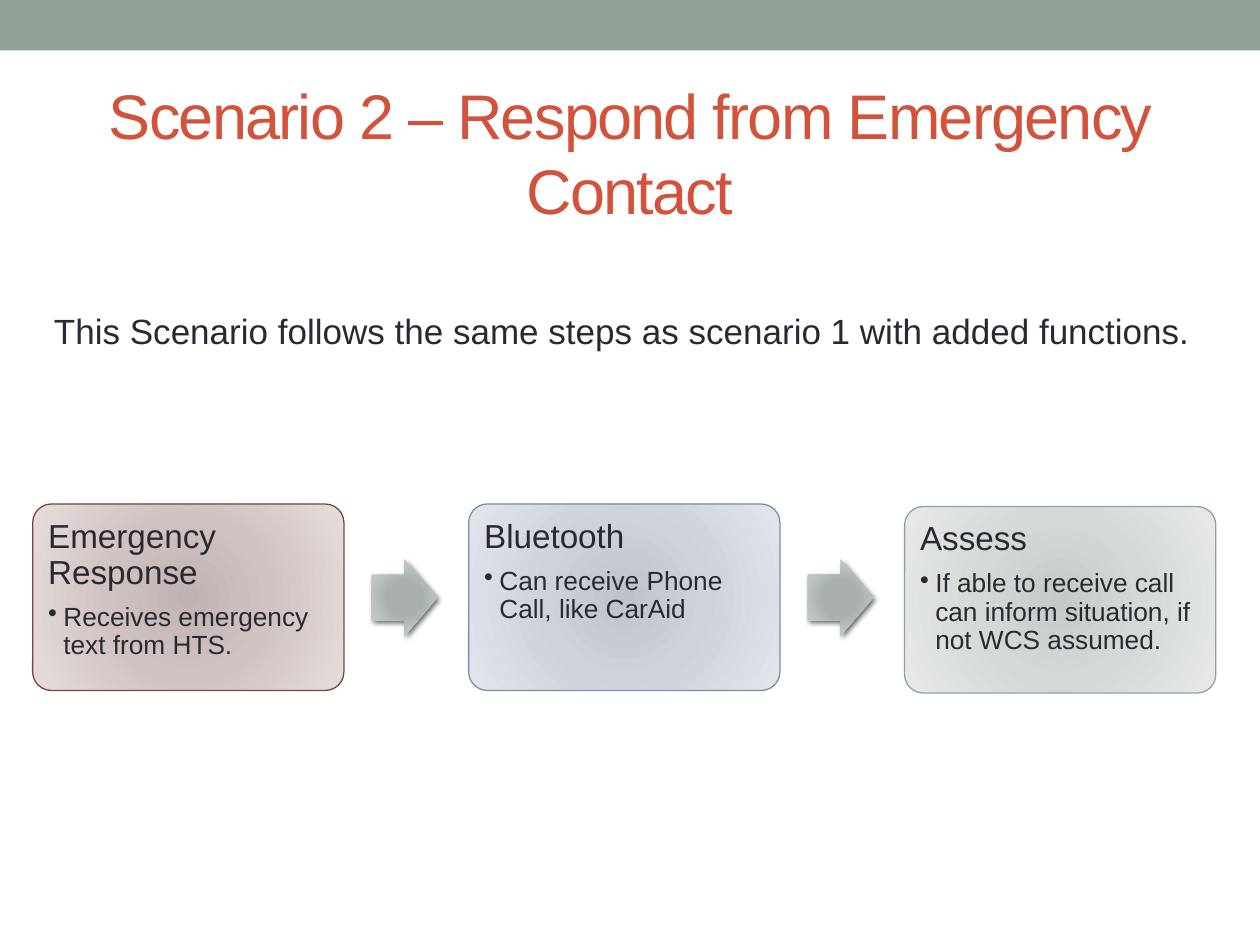
from lxml import etree
from pptx import Presentation, util as u
from pptx.dml.color import RGBColor
from pptx.enum import shapes, text
from pptx.oxml import parse_xml
from pptx.oxml.ns import nsdecls, qn

FONT = "Arial"
SAGE = RGBColor(0x93, 0xA2, 0x99)
RED = RGBColor(0xD2, 0x53, 0x3C)
INK = RGBColor(0x29, 0x29, 0x34)
BROWN = RGBColor(0x79, 0x46, 0x3D)
SLATE = RGBColor(0x80, 0x8D, 0xA0)

# Step row: left edge, column pitch, card size, arrow offset from its card
ROW_LEFT, PITCH = 0.26, 3.46
CARD_W, CARD_H = 2.47, 1.48
ARROW_DX, ARROW_W, ARROW_H = 2.69, 0.52, 0.61

# Gradient stops as {position in percent: colour}
ARROW_STOPS = {0: "AAB2AD", 34: "AAB1AD", 70: "BDC6C1", 100: "C8CECA"}
# Heading, detail, outline, gradient stops, top of card
STEPS = [
    ("Emergency Response", "Receives emergency text from HTS.", BROWN,
     {0: "C0B3B1", 45: "D0C2C0", 100: "E5DEDD"}, 4.0),
    ("Bluetooth", "Can receive Phone Call, like CarAid", SLATE,
     {0: "BEC3CB", 45: "CDD2DB", 100: "E3E6EB"}, 4.0),
    ("Assess", "If able to receive call can inform situation, if not WCS assumed.", SAGE,
     {0: "C4CAC6", 45: "D3DAD6", 100: "E7EAE8"}, 4.02),
]


def place(shape, left, top, width, height):
    shape.left, shape.top = u.Inches(left), u.Inches(top)
    shape.width, shape.height = u.Inches(width), u.Inches(height)


def add_run(paragraph, words, size, color):
    run = paragraph.add_run()
    run.text = words
    run.font.name, run.font.size = FONT, u.Pt(size)
    run.font.color.rgb = color
    return run


def add_preset(slide, kind, left, top, width, height):
    shape = slide.shapes.add_shape(
        kind, *(u.Inches(v) for v in (left, top, width, height)))
    shape.shadow.inherit = False
    shape.line.fill.background()
    return shape


def fill_radial(shape, stops):
    shape.fill.background()
    stop_xml = "".join(
        f'<a:gs pos="{pos * 1000}"><a:srgbClr val="{color}"/></a:gs>'
        for pos, color in stops.items())
    gradient = parse_xml(
        f'<a:gradFill {nsdecls("a")} rotWithShape="1"><a:gsLst>{stop_xml}</a:gsLst>'
        '<a:path path="circle"><a:fillToRect l="100000" t="100000" r="100000" b="100000"/>'
        '</a:path></a:gradFill>')
    properties = shape.fill._xPr
    properties.replace(properties.find(qn("a:noFill")), gradient)


def add_shadow(shape):
    effects = shape._element.spPr.find(qn("a:effectLst"))
    effects.append(parse_xml(
        f'<a:outerShdw {nsdecls("a")} blurRad="38100" dist="25400" dir="2700000" '
        'rotWithShape="0"><a:srgbClr val="000000"><a:alpha val="60000"/></a:srgbClr>'
        '</a:outerShdw>'))


def add_card(slide, left, top, heading, detail, outline, stops):
    card = add_preset(slide, shapes.MSO_SHAPE.ROUNDED_RECTANGLE, left, top, CARD_W, CARD_H)
    card.adjustments[0] = 0.1
    fill_radial(card, stops)
    card.line.color.rgb, card.line.width = outline, u.Pt(0.75)

    frame = card.text_frame
    frame.word_wrap = True
    frame.vertical_anchor = text.MSO_ANCHOR.TOP
    frame.margin_left = frame.margin_right = u.Inches(0.08)
    frame.margin_top = frame.margin_bottom = u.Inches(0.08)
    title_line, bullet = frame.paragraphs[0], frame.add_paragraph()
    for paragraph, words, size, after in ((title_line, heading, 19, 7),
                                          (bullet, detail, 15, 2)):
        paragraph.alignment = text.PP_ALIGN.LEFT
        paragraph.line_spacing, paragraph.space_after = 0.9, u.Pt(after)
        add_run(paragraph, words, size, INK)

    # Hanging bullet
    bullet.level = 1
    properties = bullet._p.get_or_add_pPr()
    properties.set("marL", str(u.Inches(0.12)))
    properties.set("indent", str(-u.Inches(0.12)))
    etree.SubElement(properties, qn("a:buChar"), char="•")


def add_arrow(slide, left, top, rotation):
    arrow = add_preset(slide, shapes.MSO_SHAPE.RIGHT_ARROW, left, top, ARROW_W, ARROW_H)
    arrow.adjustments[0], arrow.adjustments[1] = 0.6, 0.5
    arrow.rotation = rotation
    fill_radial(arrow, ARROW_STOPS)
    add_shadow(arrow)


def add_title(slide, words):
    title = slide.shapes.title
    place(title, 0.5, 0.58, 9, 1.25)
    title.text_frame.vertical_anchor = text.MSO_ANCHOR.MIDDLE
    paragraph = title.text_frame.paragraphs[0]
    paragraph.alignment = text.PP_ALIGN.CENTER
    run = add_run(paragraph, words, 36, RED)
    run.font._element.set("spc", "-100")


def add_intro(slide, words):
    box = slide.shapes.add_textbox(*(u.Inches(v) for v in (0.33, 2.4, 9.25, 0.44)))
    box.text_frame.word_wrap = True
    box.text_frame.auto_size = text.MSO_AUTO_SIZE.SHAPE_TO_FIT_TEXT
    box.text_frame.vertical_anchor = text.MSO_ANCHOR.MIDDLE
    add_run(box.text_frame.paragraphs[0], words, 20, INK)


def main():
    prs = Presentation()
    prs.slide_width, prs.slide_height = u.Inches(10), u.Inches(7.5)
    slide = prs.slides.add_slide(prs.slide_layouts[5])

    # Top band, title and introduction
    band = add_preset(slide, shapes.MSO_SHAPE.RECTANGLE, 0, 0, 10, 0.4)
    band.fill.solid()
    band.fill.fore_color.rgb = SAGE
    add_title(slide, "Scenario 2 – Respond from Emergency Contact")
    add_intro(slide, "This Scenario follows the same steps as scenario 1 with added functions.")

    # Steps joined by arrows
    for column, (heading, detail, outline, stops, top) in enumerate(STEPS):
        left = ROW_LEFT + column * PITCH
        add_card(slide, left, top, heading, detail, outline, stops)
        if column < len(STEPS) - 1:
            add_arrow(slide, left + ARROW_DX, 4.44, 0.3 * column)

    prs.save("out.pptx")


if __name__ == "__main__":
    main()
